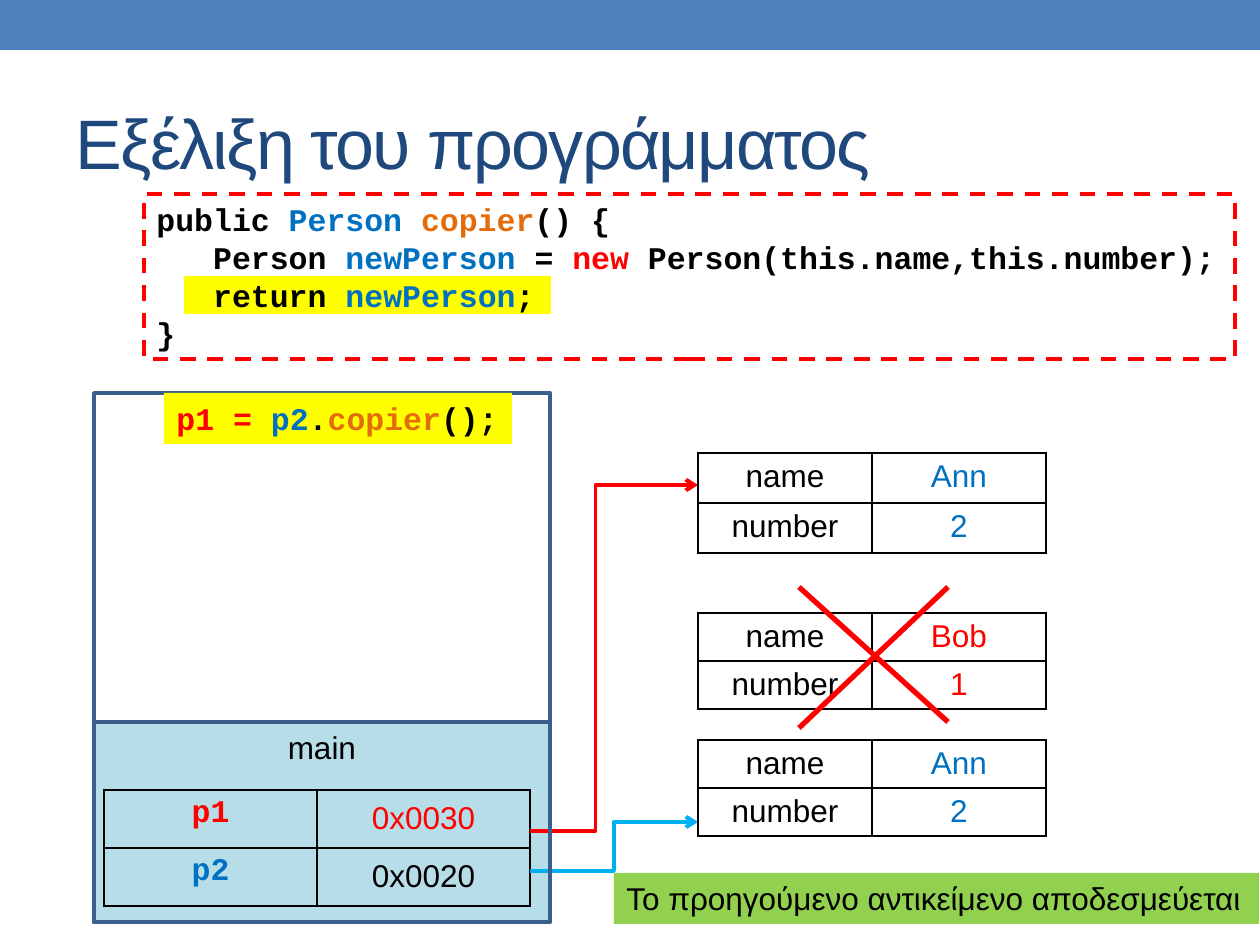
from lxml.etree import SubElement
from pptx import Presentation
from pptx.dml.color import RGBColor as RGB
from pptx.enum.dml import MSO_LINE as Dash
from pptx.enum.shapes import MSO_CONNECTOR as Conn, MSO_SHAPE as Shape
from pptx.enum.text import MSO_ANCHOR as Anchor, MSO_AUTO_SIZE as Auto, PP_ALIGN as Align
from pptx.oxml.ns import qn
from pptx.util import Pt

PX = 914400 / 126
SANS, MONO = "Arial", "Courier New"
HEX = {
    "black": "000000", "red": "FF0000", "blue": "0070C0", "orange": "E46C0A",
    "navy": "1F497D", "bar": "4F81BD", "edge": "3A5F8C", "frame": "B7DEE8",
    "yellow": "FFFF00", "green": "92D050", "sky": "00B0F0",
}

TITLE = "Εξέλιξη του προγράμματος"
NOTE = "To προηγούμενο αντικείμενο αποδεσμεύεται"
CALL = [[("p1 = ", "red"), ("p2", "blue"), (".", "black"),
         ("copier", "orange"), ("();", "black")]]
CODE = [
    [("public ", "black"), ("Person ", "blue"), ("copier", "orange"), ("() {", "black")],
    [("   Person ", "black"), ("newPerson ", "blue"), ("= ", "black"), ("new", "red"),
     (" Person(this.name,this.number);", "black")],
    [("   return ", "black"), ("newPerson", "blue"), (";", "black")],
    [("}", "black")],
]
VARS = [("p1", "red", "0x0030", "red"), ("p2", "blue", "0x0020", "black")]
OBJECTS = [
    (453, 50, "Ann", "2", "blue"),
    (613, 48, "Bob", "1", "red"),
    (740, 48, "Ann", "2", "blue"),
]
ARROWS = [
    ((530, 831), (698, 485), "red", 0.39),
    ((530, 871), (698, 822), "sky", 0.5),
]
CROSS = [((948, 587), (799, 728)), ((799, 587), (948, 722))]


def px(*nums):
    return [round(n * PX) for n in nums]


def tint(name):
    return RGB.from_string(HEX[name])


def write(frame, lines, face=SANS, size=18, bold=False, align=Align.LEFT):
    look = {"name": face, "size": Pt(size), "bold": bold}
    for i, line in enumerate(lines):
        para = frame.add_paragraph() if i else frame.paragraphs[0]
        para.alignment = align
        for text, hue in line:
            run = para.add_run()
            run.text = text
            for key, val in look.items():
                setattr(run.font, key, val)
            run.font.color.rgb = tint(hue)


def box(area, fill=None, edge=None, width=2, dash=None, wrap=False):
    item = slide.shapes.add_shape(Shape.RECTANGLE, *px(*area))
    item.shadow.inherit = False
    if fill:
        item.fill.solid()
        item.fill.fore_color.rgb = tint(fill)
    else:
        item.fill.background()
    if edge:
        item.line.color.rgb = tint(edge)
        item.line.width = Pt(width)
        item.line.dash_style = dash
    else:
        item.line.fill.background()
    item.text_frame.word_wrap = wrap
    item.text_frame.vertical_anchor = Anchor.TOP
    return item


def link(start, end, hue, width, kind=Conn.STRAIGHT, bend=None):
    line = slide.shapes.add_connector(kind, *px(*start, *end))
    line.line.color.rgb = tint(hue)
    line.line.width = Pt(width)
    props = line._element.spPr
    SubElement(props, qn("a:effectLst"))
    if bend:
        SubElement(props.find(qn("a:ln")), qn("a:tailEnd"), type="arrow")
        guides = props.find(qn("a:prstGeom")).get_or_add_avLst()
        SubElement(guides, qn("a:gd"), name="adj1", fmla=f"val {round(bend * 100000)}")


def border(cell):
    props = cell._tc.get_or_add_tcPr()
    for i, side in enumerate(("lnL", "lnR", "lnT", "lnB")):
        line = props.makeelement(qn(f"a:{side}"), {"w": "12700"})
        props.insert(i, line)
        fill = SubElement(line, qn("a:solidFill"))
        SubElement(fill, qn("a:srgbClr"), val=HEX["black"])


def grid(left, top, wide, high, rows):
    table = slide.shapes.add_table(2, 2, *px(left, top, 2 * wide, 2 * high)).table
    table.first_row = table.horz_banding = False
    for i, row in enumerate(rows):
        table.rows[i].height = px(high)[0]
        for j, (text, hue, face, bold, anchor) in enumerate(row):
            table.columns[j].width = px(wide)[0]
            cell = table.cell(i, j)
            cell.fill.background()
            cell.vertical_anchor = anchor
            write(cell.text_frame, [[(text, hue)]], face, bold=bold, align=Align.CENTER)
            border(cell)


deck = Presentation()
deck.slide_width, deck.slide_height = px(1260, 945)
slide = deck.slides.add_slide(deck.slide_layouts[5])

box((0, 0, 1260, 50), "bar")
head = slide.shapes.title
head.left, head.top, head.width, head.height = px(63, 73, 1134, 136)
head.text_frame.auto_size = Auto.NONE
head.text_frame.vertical_anchor = Anchor.MIDDLE
write(head.text_frame, [[(TITLE, "navy")]], size=40)
head.text_frame.paragraphs[0].runs[0]._r.get_or_add_rPr().set("spc", "-100")

main = box((94, 722, 456, 200), "frame", "edge")
write(main.text_frame, [[("main", "black")]], align=Align.CENTER)
grid(104, 790, 213, 58, [
    [(var, hue, MONO, True, Anchor.TOP), (ref, tone, SANS, False, Anchor.MIDDLE)]
    for var, hue, ref, tone in VARS
])
for start, end, hue, bend in ARROWS:
    link(start, end, hue, 2.25, Conn.ELBOW, bend)
box((94, 393, 456, 529), edge="edge")

for top, high, name, number, hue in OBJECTS:
    grid(698, top, 174, high, [
        [(key, "black", SANS, False, Anchor.TOP), (val, hue, SANS, False, Anchor.TOP)]
        for key, val in (("name", name), ("number", number))
    ])

call = box((164, 393, 348, 51), "yellow")
write(call.text_frame, CALL, MONO, bold=True)
box((184, 276, 367, 38), "yellow")
code = box((144, 194, 1091, 165), edge="red", width=2.25, dash=Dash.DASH, wrap=True)
write(code.text_frame, CODE, MONO, bold=True)
note = box((614, 873, 645, 51), "green")
write(note.text_frame, [[(NOTE, "black")]])
for start, end in CROSS:
    link(start, end, "red", 3)

deck.save("out.pptx")
